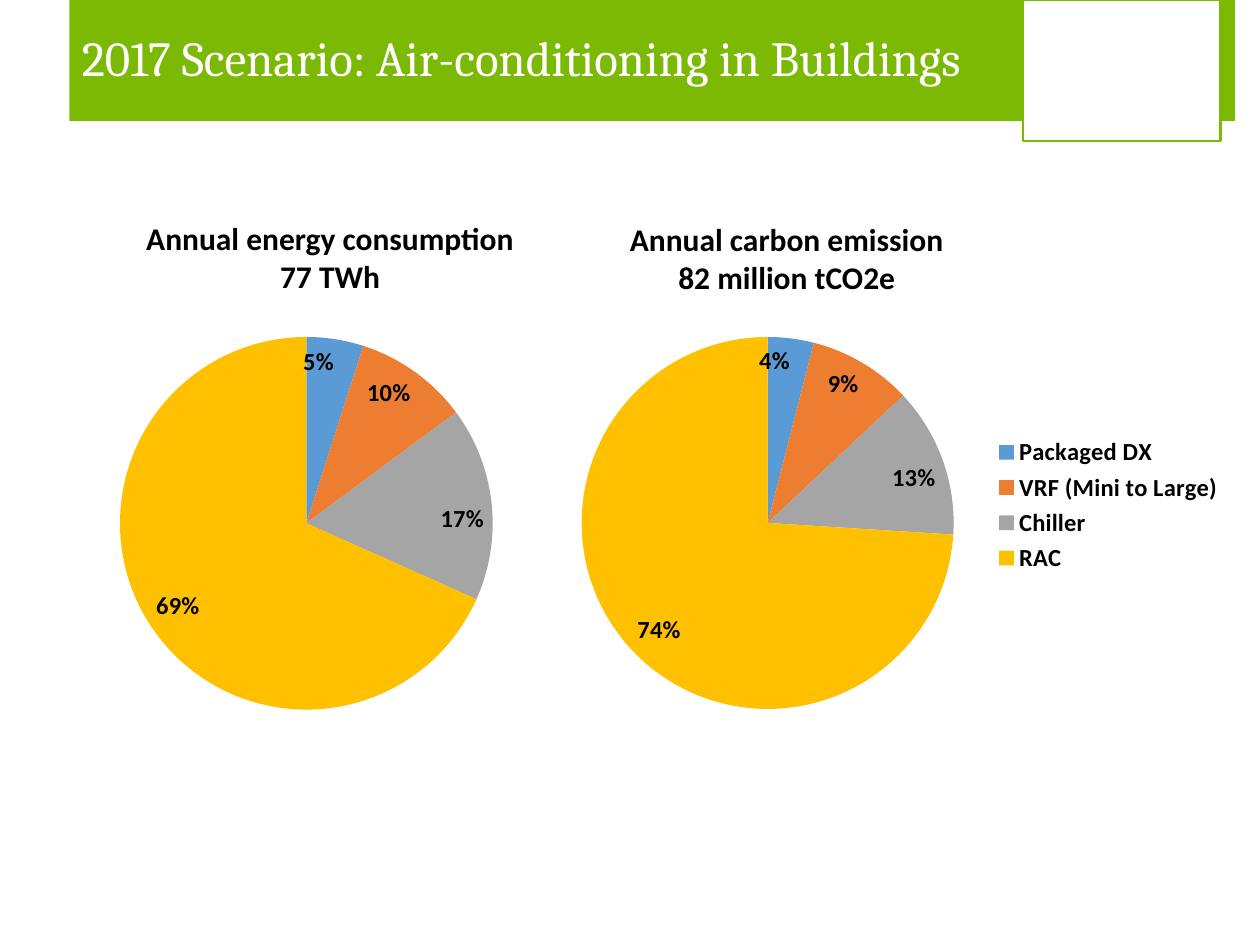
from dataclasses import dataclass

from lxml import etree
from pptx import Presentation
from pptx.chart.chart import Chart
from pptx.chart.data import CategoryChartData
from pptx.dml.color import RGBColor
from pptx.enum.chart import XL_CHART_TYPE, XL_LABEL_POSITION, XL_LEGEND_POSITION
from pptx.enum.shapes import MSO_SHAPE
from pptx.enum.text import MSO_ANCHOR, MSO_AUTO_SIZE, PP_ALIGN
from pptx.oxml.ns import qn
from pptx.slide import Slide
from pptx.util import Pt

PIE = XL_CHART_TYPE.PIE
INSIDE_END = XL_LABEL_POSITION.INSIDE_END
LEGEND_RIGHT = XL_LEGEND_POSITION.RIGHT
RECTANGLE = MSO_SHAPE.RECTANGLE
MIDDLE = MSO_ANCHOR.MIDDLE
NO_AUTOFIT = MSO_AUTO_SIZE.NONE
FIT_SHAPE = MSO_AUTO_SIZE.SHAPE_TO_FIT_TEXT
LEFT = PP_ALIGN.LEFT
CENTER = PP_ALIGN.CENTER

GREEN = RGBColor(0x7C, 0xB9, 0x04)
WHITE = RGBColor(0xFF, 0xFF, 0xFF)
BLACK = RGBColor(0x00, 0x00, 0x00)
SLICE_COLORS = (
    RGBColor(0x5B, 0x9B, 0xD5),
    RGBColor(0xED, 0x7D, 0x31),
    RGBColor(0xA5, 0xA5, 0xA5),
    RGBColor(0xFF, 0xC0, 0x00),
)
BODY_FONT = "Calibri"
TITLE_FONT = "Cambria"


@dataclass(frozen=True)
class Area:
    left: float
    top: float
    width: float
    height: float

    def lengths(self) -> tuple[Pt, Pt, Pt, Pt]:
        return Pt(self.left), Pt(self.top), Pt(self.width), Pt(self.height)


@dataclass(frozen=True)
class PiePanel:
    heading: tuple[str, str]
    heading_area: Area
    chart_area: Area
    pie_area: Area
    categories: tuple[str, ...]
    values: tuple[int, ...]
    has_legend: bool


BAND = Area(39.6, 0, 666, 69.1)
CORNER_BOX = Area(584.6, 0, 113, 80.6)
TITLE = Area(39.6, 0, 545, 69.1)
PANELS = (
    PiePanel(
        ("Annual energy consumption", "77 TWh"),
        Area(75.2, 121.7, 226.8, 51.1),
        Area(-25.9, 162, 406.1, 254.2),
        Area(68.6, 192.6, 213, 213),
        ("1", "2", "3", "4"),
        (5, 10, 17, 69),
        False,
    ),
    PiePanel(
        ("Annual carbon emission", "82 million tCO2e"),
        Area(351.7, 122.4, 195.8, 51.1),
        Area(313.2, 162, 393.1, 253.4),
        Area(332.4, 192.6, 212.6, 212.6),
        ("Packaged DX", "VRF (Mini to Large)", "Chiller", "RAC"),
        (4, 9, 13, 74),
        True,
    ),
)


def add_rectangle(page: Slide, area: Area, fill: RGBColor) -> None:
    box = page.shapes.add_shape(RECTANGLE, *area.lengths())
    box.shadow.inherit = False
    box.fill.solid()
    box.fill.fore_color.rgb = fill
    box.line.color.rgb = GREEN
    box.line.width = Pt(1.5)
    if fill == GREEN:
        box.line.fill.background()


def set_title(page: Slide, text: str) -> None:
    title = page.shapes.title
    title.left, title.top, title.width, title.height = TITLE.lengths()
    title._element.getparent().append(title._element)
    frame = title.text_frame
    frame.word_wrap = True
    frame.auto_size = NO_AUTOFIT
    frame.vertical_anchor = MIDDLE
    para = frame.paragraphs[0]
    para.alignment = LEFT
    para.line_spacing = 0.9
    span = para.add_run()
    span.text = text
    span.font.name = TITLE_FONT
    span.font.size = Pt(28)
    span.font.color.rgb = WHITE


def add_heading(page: Slide, panel: PiePanel) -> None:
    box = page.shapes.add_textbox(*panel.heading_area.lengths())
    frame = box.text_frame
    frame.word_wrap = False
    frame.auto_size = FIT_SHAPE
    for index, line in enumerate(panel.heading):
        para = frame.add_paragraph() if index else frame.paragraphs[0]
        para.alignment = CENTER
        span = para.add_run()
        span.text = line
        span.font.name = BODY_FONT
        span.font.size = Pt(18)
        span.font.bold = True
        span.font.color.rgb = BLACK


def place_pie(chart: Chart, chart_area: Area, pie_area: Area) -> None:
    plot_area = chart._chartSpace.find(f".//{qn('c:plotArea')}")
    for old_layout in plot_area.findall(qn("c:layout")):
        plot_area.remove(old_layout)
    layout = etree.Element(qn("c:layout"))
    manual = etree.SubElement(layout, qn("c:manualLayout"))
    settings = {
        "layoutTarget": "inner",
        "xMode": "edge",
        "yMode": "edge",
        "x": (pie_area.left - chart_area.left) / chart_area.width,
        "y": (pie_area.top - chart_area.top) / chart_area.height,
        "w": pie_area.width / chart_area.width,
        "h": pie_area.height / chart_area.height,
    }
    for name, value in settings.items():
        etree.SubElement(manual, qn(f"c:{name}")).set("val", str(value))
    plot_area.insert(0, layout)


def add_pie(page: Slide, panel: PiePanel) -> None:
    data = CategoryChartData()
    data.categories = panel.categories
    data.add_series("Series 1", panel.values)
    chart = page.shapes.add_chart(PIE, *panel.chart_area.lengths(), data).chart
    chart.has_title = False
    chart.font.name = BODY_FONT
    chart.font.size = Pt(10)
    chart.font.color.rgb = BLACK
    plot = chart.plots[0]
    plot.vary_by_categories = True
    for index, color in enumerate(SLICE_COLORS):
        fill = plot.series[0].points[index].format.fill
        fill.solid()
        fill.fore_color.rgb = color
    plot.has_data_labels = True
    labels = plot.data_labels
    labels.show_percentage = False
    labels.show_value = True
    labels.number_format = '0"%"'
    labels.number_format_is_linked = False
    labels.position = INSIDE_END
    fonts = [labels.font]
    chart.has_legend = panel.has_legend
    if panel.has_legend:
        chart.legend.position = LEGEND_RIGHT
        chart.legend.include_in_layout = False
        fonts.append(chart.legend.font)
    for font in fonts:
        font.name = BODY_FONT
        font.size = Pt(14)
        font.bold = True
        font.color.rgb = BLACK
    place_pie(chart, panel.chart_area, panel.pie_area)


def main() -> None:
    deck = Presentation()
    deck.slide_width = Pt(720)
    deck.slide_height = Pt(540)
    page = deck.slides.add_slide(deck.slide_layouts[5])
    add_rectangle(page, BAND, GREEN)
    add_rectangle(page, CORNER_BOX, WHITE)
    set_title(page, "2017 Scenario: Air-conditioning in Buildings")
    for panel in PANELS:
        add_pie(page, panel)
    for panel in PANELS:
        add_heading(page, panel)
    deck.save("out.pptx")


if __name__ == "__main__":
    main()
